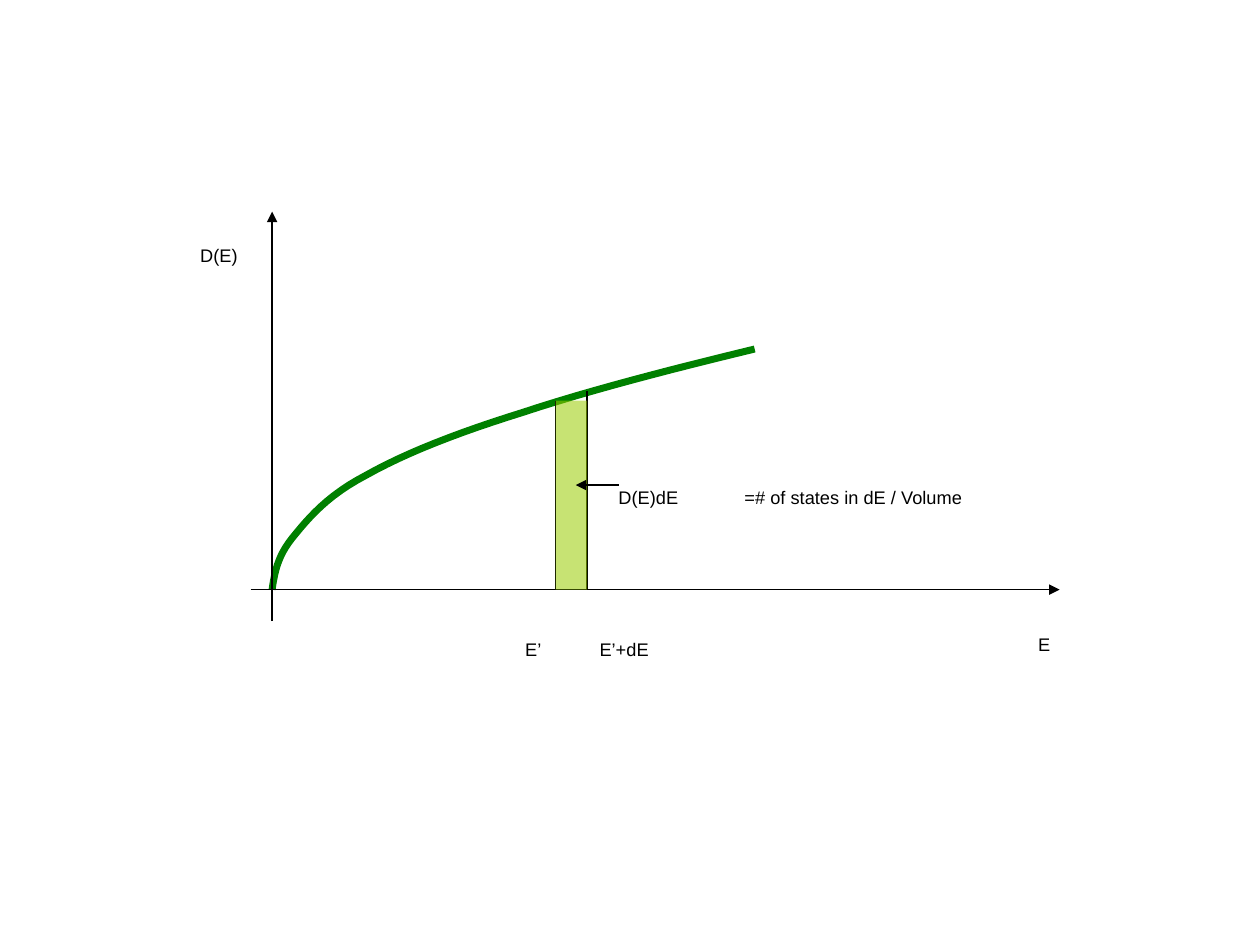
import pptx
import pptx.dml.color
import pptx.enum.shapes
import pptx.enum.text
import pptx.util
from lxml import etree
from pptx.oxml.ns import qn
from pptx.util import Inches

COLORS = {"ink": "000000", "curve": "008000", "strip": "99CC00"}

ORIGIN_X, AXIS_Y = 2.16, 4.68
STRIP_LEFT, STRIP_RIGHT, STRIP_TOP = 4.41, 4.66, 3.18

# Bezier segments of D(E): two control points and an end point each
CURVE = [
    ((2.18, 4.55), (2.20, 4.42), (2.32, 4.27)),
    ((2.45, 4.11), (2.60, 3.93), (2.91, 3.77)),
    ((3.21, 3.60), (3.64, 3.43), (4.16, 3.27)),
    ((4.67, 3.10), (5.33, 2.93), (5.99, 2.77)),
]

LABELS = [
    ("E", 8.14, 4.81, 0.37),
    ("D(E)", 1.49, 1.72, 0.72),
    ("E’", 4.07, 4.85, 0.42),
    ("E’+dE", 4.66, 4.85, 0.88),
    ("D(E)dE", 4.81, 3.64, 1.02),
    ("=# of states in dE / Volume", 5.81, 3.64, 3.19),
]


def rgb(name):
    return pptx.dml.color.RGBColor.from_string(COLORS[name])


def bezier_point(start, c1, c2, end, t):
    u = 1 - t
    return tuple(
        u**3 * a + 3 * u * u * t * b + 3 * u * t * t * c + t**3 * d
        for a, b, c, d in zip(start, c1, c2, end)
    )


def add_curve(s, start, segments, steps=12):
    """Draw the Bezier segments as one open, finely divided line."""
    points = [start]
    for c1, c2, end in segments:
        pen = points[-1]
        points += [bezier_point(pen, c1, c2, end, i / steps) for i in range(1, steps + 1)]
    # The builder rounds to whole units, so the points are given in EMU
    points = [(Inches(x), Inches(y)) for x, y in points]
    builder = s.shapes.build_freeform(*points[0])
    builder.add_line_segments(points[1:], close=False)
    sp = builder.convert_to_shape()
    sp.shadow.inherit = False
    sp.fill.background()
    sp.line.color.rgb = rgb("curve")
    sp.line.width = pptx.util.Pt(4)


def add_line(s, x1, y1, x2, y2, arrow=False):
    """Draw a thin line, with an optional arrowhead at its end."""
    line = s.shapes.add_connector(
        pptx.enum.shapes.MSO_CONNECTOR.STRAIGHT,
        Inches(x1), Inches(y1), Inches(x2), Inches(y2),
    )
    line.line.color.rgb = rgb("ink")
    line.line.width = pptx.util.Pt(0.75)
    if arrow:
        ln = line.line._get_or_add_ln()
        etree.SubElement(ln, qn("a:tailEnd"), type="triangle")
    etree.SubElement(line._element.spPr, qn("a:effectLst"))


def add_strip(s):
    sp = s.shapes.add_shape(
        pptx.enum.shapes.MSO_SHAPE.RECTANGLE,
        Inches(STRIP_LEFT), Inches(STRIP_TOP),
        Inches(STRIP_RIGHT - STRIP_LEFT), Inches(AXIS_Y - STRIP_TOP),
    )
    sp.shadow.inherit = False
    sp.line.fill.background()
    sp.fill.solid()
    sp.fill.fore_color.rgb = rgb("strip")
    color = sp._element.spPr.find(".//" + qn("a:srgbClr"))
    etree.SubElement(color, qn("a:alpha"), val="55000")


def add_label(s, text, x, y, width):
    """Add a one-line label set as subscript."""
    tf = s.shapes.add_textbox(Inches(x), Inches(y), Inches(width), Inches(0.4)).text_frame
    tf.word_wrap = False
    tf.auto_size = pptx.enum.text.MSO_AUTO_SIZE.SHAPE_TO_FIT_TEXT
    tf.text = text
    r = tf.paragraphs[0].runs[0]
    r.font.name = "Arial"
    r.font.size = pptx.util.Pt(18)
    r.font.color.rgb = rgb("ink")
    r.font._element.set("baseline", "-25000")


def main():
    prs = pptx.Presentation()
    prs.slide_width, prs.slide_height = Inches(10), Inches(7.5)
    s = prs.slides.add_slide(prs.slide_layouts[6])

    add_curve(s, (ORIGIN_X, AXIS_Y), CURVE)
    add_line(s, 1.99, AXIS_Y, 8.41, AXIS_Y, arrow=True)
    add_line(s, ORIGIN_X, 4.93, ORIGIN_X, 1.68, arrow=True)
    add_line(s, STRIP_LEFT, STRIP_TOP, STRIP_LEFT, AXIS_Y)
    add_line(s, STRIP_RIGHT, 3.1, STRIP_RIGHT, AXIS_Y)
    add_strip(s)
    for label in LABELS:
        add_label(s, *label)
    add_line(s, 4.91, 3.85, 4.57, 3.85, arrow=True)

    prs.save("out.pptx")


if __name__ == "__main__":
    main()
